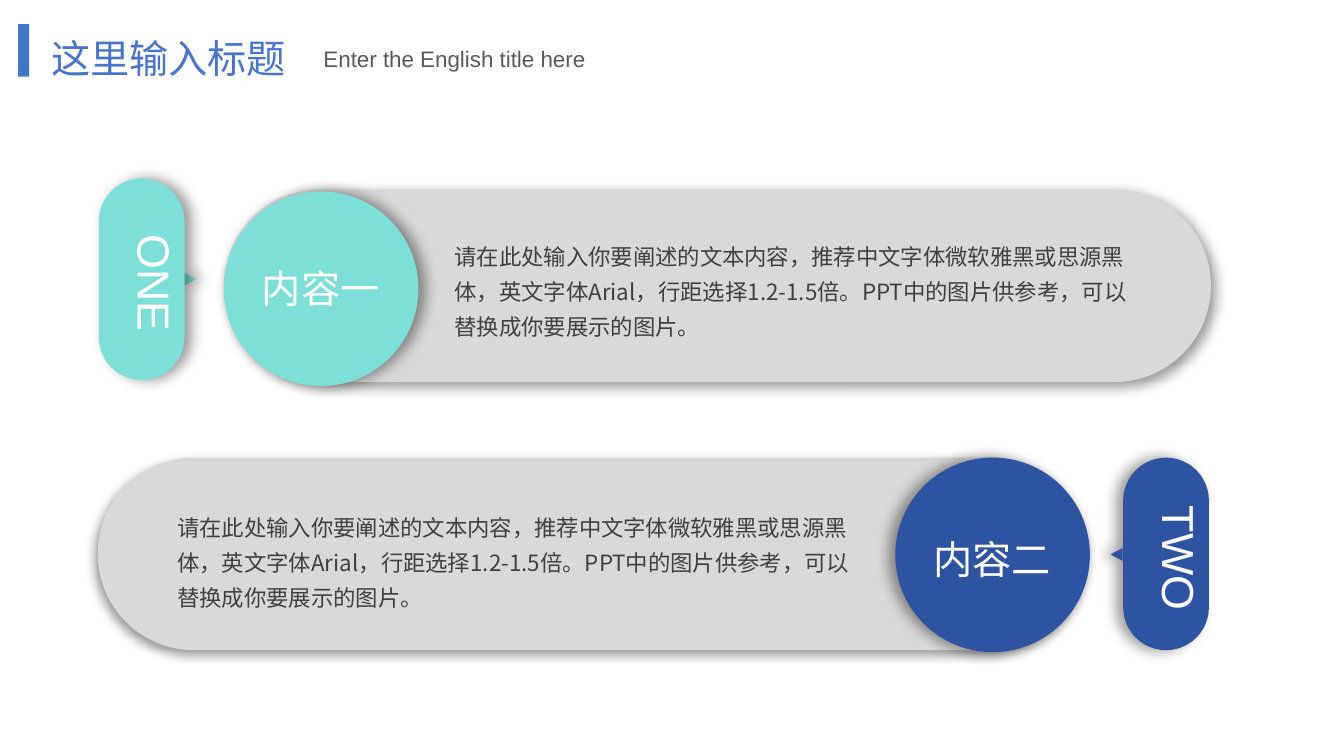
from collections import namedtuple
from dataclasses import dataclass

from lxml import etree
from pptx import Presentation
from pptx.dml import color
from pptx.enum import shapes, text
from pptx.oxml import ns
from pptx.util import Inches, Pt

Box = namedtuple("Box", "left top width height")
Shadow = namedtuple("Shadow", "blur distance angle")


@dataclass(frozen=True)
class Theme:
    accent: str = "004ABA"
    title: str = "4874CB"
    subtitle: str = "595959"
    body: str = "404040"
    light: str = "FFFFFF"
    panel: str = "D9D9D9"
    mint: str = "7DDFD7"
    navy: str = "2E54A1"
    latin: str = "Arial"
    chinese: str = "Noto Sans CJK SC"
    title_size: int = 28
    tab_size: int = 32
    body_size: int = 16


THEME = Theme()
BODY = (
    "请在此处输入你要阐述的文本内容，推荐中文字体微软雅黑或思源黑体，"
    "英文字体Arial，行距选择1.2-1.5倍。PPT中的图片供参考，可以替换成你要展示的图片。"
)


def add_child(parent, tag, **attributes):
    return etree.SubElement(parent, ns.qn(tag), attributes)


def place(box):
    return [Inches(round(length, 2)) for length in box]


def add_solid(slide, preset, box, fill, shadow=None, opacity=None, rotation=0):
    solid = slide.shapes.add_shape(preset, *place(box))
    solid.fill.solid()
    solid.fill.fore_color.rgb = color.RGBColor.from_string(fill)
    solid.line.fill.background()
    solid.shadow.inherit = False
    solid.rotation = rotation
    if preset == shapes.MSO_SHAPE.ROUNDED_RECTANGLE:
        solid.adjustments[0] = 0.5
    properties = solid.fill._xPr
    if opacity:
        tint = properties.find(".//" + ns.qn("a:srgbClr"))
        add_child(tint, "a:alpha", val=str(opacity * 1000))
    if shadow:
        outer = add_child(
            properties.find(ns.qn("a:effectLst")), "a:outerShdw",
            blurRad=str(Pt(shadow.blur)), dist=str(Pt(shadow.distance)),
            dir=str(shadow.angle * 60000), algn="ctr", rotWithShape="0")
        tint = add_child(outer, "a:srgbClr", val="000000")
        add_child(tint, "a:alpha", val="40000")
    return solid


def add_words(slide, box, words, size, ink, font, spacing=None, align=None, vertical=False):
    frame = slide.shapes.add_textbox(*place(box)).text_frame
    frame.word_wrap = not vertical
    frame.auto_size = text.MSO_AUTO_SIZE.SHAPE_TO_FIT_TEXT
    if vertical:
        frame._txBody.bodyPr.set("vert", "eaVert")
    paragraph = frame.paragraphs[0]
    paragraph.line_spacing = spacing
    paragraph.alignment = align
    run = paragraph.add_run()
    run.text = words
    run.font.size = Pt(size)
    run.font.name = font
    run.font.color.rgb = color.RGBColor.from_string(ink)
    add_child(run.font._element, "a:ea", typeface=font)


def add_header(slide, box):
    add_solid(slide, shapes.MSO_SHAPE.RECTANGLE,
              Box(box.left, box.top, 0.11, box.height), THEME.accent, opacity=75)
    add_words(slide, Box(box.left + 0.23, box.top - 0.3, 4.15, 0.92), "这里输入标题",
              THEME.title_size, THEME.title, THEME.chinese, spacing=1.75)
    add_words(slide, Box(box.left + 2.93, box.top + 0.16, 5.49, 0.37),
              "Enter the English title here", THEME.body_size, THEME.subtitle, THEME.latin)


def add_tab(slide, box, word, fill, shadow, points_right):
    arrow_left = box.left + box.width - 0.01 if points_right else box.left - 0.13
    arrow = Box(arrow_left, box.top + box.height / 2 - 0.06, 0.13, 0.12)
    pieces = [
        (shapes.MSO_SHAPE.ISOSCELES_TRIANGLE, arrow, 90 if points_right else 270),
        (shapes.MSO_SHAPE.ROUNDED_RECTANGLE, box, 0),
    ]
    for preset, piece, rotation in pieces if points_right else reversed(pieces):
        add_solid(slide, preset, piece, fill, shadow, rotation=rotation)
    label_height = 1.07 if points_right else 1.15
    label_top = box.top + (box.height - label_height) / 2
    add_words(slide, Box(box.left + 0.14, label_top, 0.74, label_height), word,
              THEME.tab_size, THEME.light, THEME.latin, vertical=True)


def add_panel(slide, box, heading, fill, panel_shadow, ball_shadow, ball_on_left,
              ball_drop, body_offset, heading_drop):
    add_solid(slide, shapes.MSO_SHAPE.ROUNDED_RECTANGLE, box, THEME.panel, panel_shadow)
    ball_size = 1.93
    ball_left = box.left if ball_on_left else box.left + box.width - ball_size
    add_solid(slide, shapes.MSO_SHAPE.OVAL,
              Box(ball_left, box.top + ball_drop, ball_size, ball_size), fill, ball_shadow)
    body_left, body_top = body_offset
    add_words(slide, Box(box.left + body_left, box.top + body_top, 6.9, 1.15), BODY,
              THEME.body_size, THEME.body, THEME.chinese, spacing=1.3)
    add_words(slide, Box(ball_left + 0.25, box.top + heading_drop, 1.42, 0.57), heading,
              THEME.title_size, THEME.light, THEME.chinese, align=text.PP_ALIGN.CENTER)


def add_first_row(slide, box):
    shadow = Shadow(10, 5, 0)
    add_tab(slide, Box(box.left, box.top, 0.85, box.height), "ONE", THEME.mint, shadow, True)
    add_panel(slide, Box(box.left + 1.24, box.top + 0.11, box.width - 1.24, 1.91),
              "内容一", THEME.mint, Shadow(9, 4, 45), shadow, True, 0.02, (2.19, 0.4), 0.69)


def add_second_row(slide, box):
    shadow = Shadow(10, 5, 180)
    add_tab(slide, Box(box.left + box.width - 0.85, box.top, 0.85, box.height),
            "TWO", THEME.navy, shadow, False)
    add_panel(slide, Box(box.left, box.top, box.width - 1.18, box.height),
              "内容二", THEME.navy, Shadow(7, 4, 135), shadow, False, 0, (0.69, 0.43), 0.72)


def main():
    deck = Presentation()
    deck.slide_width, deck.slide_height = Inches(13.33), Inches(7.5)
    slide = deck.slides.add_slide(deck.slide_layouts[6])
    add_header(slide, Box(0.18, 0.24, 12.97, 0.52))
    add_first_row(slide, Box(0.98, 1.77, 11.03, 2))
    add_second_row(slide, Box(0.97, 4.54, 11.02, 1.91))
    deck.save("out.pptx")


if __name__ == "__main__":
    main()
